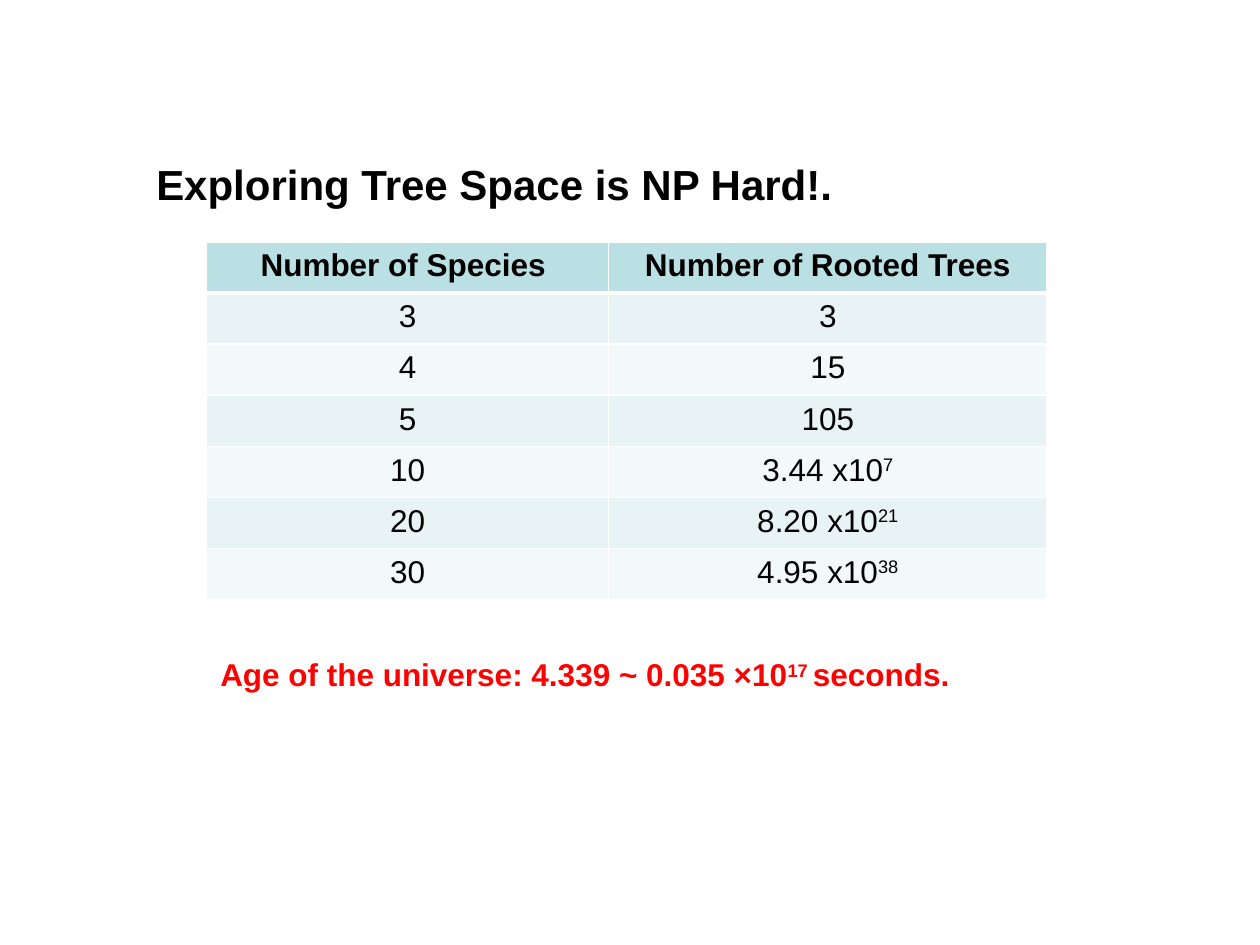
from dataclasses import dataclass

from lxml.etree import SubElement
from pptx import Presentation
from pptx.dml.color import RGBColor
from pptx.enum.text import MSO_ANCHOR, MSO_AUTO_SIZE, PP_ALIGN
from pptx.oxml.ns import qn
from pptx.util import Inches, Pt


@dataclass(frozen=True)
class Theme:
    font: str = "Arial"
    title_size: int = 24
    text_size: int = 18
    ink: str = "000000"
    accent: str = "FF0000"
    rule: str = "FFFFFF"
    header_fill: str = "BBE0E3"
    band_fills: tuple = ("E7F3F4", "F3F9FA")
    rule_width: int = 1
    header_rule_width: int = 3


THEME = Theme()
SUPERSCRIPT = "30000"

# Each text is a list of (words, is superscript) runs.
TITLE = [("Exploring Tree Space is NP Hard!.", False)]
HEADERS = ["Number of Species ", "Number of Rooted Trees"]
TREE_COUNTS = [  # species, rooted trees, power of ten
    ("3", "3", ""),
    ("4", "15", ""),
    ("5", "105", ""),
    ("10", "3.44 x10", "7"),
    ("20", "8.20 x10", "21"),
    ("30", "4.95 x10", "38"),
]
UNIVERSE_AGE = [
    ("Age of the universe: 4.339 ~ 0.035 ×10", False),
    ("17 ", True),
    ("seconds.", False),
]

TITLE_BOX = (1.14, 1.21, 7.97, 0.5)
TABLE_BOX = (1.64, 1.92, 6.67, 2.84)
AGE_BOX = (1.65, 5.15, 6.06, 0.4)
COLUMN_WIDTHS = (3.19, 3.48)


def write_runs(paragraph, runs, size, color, bold):
    for words, raised in runs:
        run = paragraph.add_run()
        run.text = words
        run.font.name = THEME.font
        run.font.size = Pt(size)
        run.font.bold = bold
        run.font.color.rgb = RGBColor.from_string(color)
        if raised:
            run.font._element.set("baseline", SUPERSCRIPT)


def set_borders(cell, top, bottom):
    """Rule all four sides; call before the fill, which must follow in the XML."""
    properties = cell._tc.get_or_add_tcPr()
    sides = {"L": THEME.rule_width, "R": THEME.rule_width, "T": top, "B": bottom}
    for side, width in sides.items():
        line = SubElement(properties, qn(f"a:ln{side}"), w=str(Pt(width)))
        solid = SubElement(line, qn("a:solidFill"))
        SubElement(solid, qn("a:srgbClr"), val=THEME.rule)


def add_title(slide):
    title = slide.shapes.title
    title.left, title.top, title.width, title.height = map(Inches, TITLE_BOX)
    frame = title.text_frame
    frame.word_wrap = True
    frame.auto_size = MSO_AUTO_SIZE.SHAPE_TO_FIT_TEXT
    frame.vertical_anchor = MSO_ANCHOR.TOP
    paragraph = frame.paragraphs[0]
    paragraph.alignment = PP_ALIGN.LEFT
    write_runs(paragraph, TITLE, THEME.title_size, THEME.ink, True)


def add_tree_table(slide):
    rows = [[[(header, False)] for header in HEADERS]]
    for species, trees, power in TREE_COUNTS:
        tree_runs = [(trees, False)] + ([(power, True)] if power else [])
        rows.append([[(species, False)], tree_runs])

    table = slide.shapes.add_table(
        len(rows), len(HEADERS), *map(Inches, TABLE_BOX)
    ).table
    for column, width in zip(table.columns, COLUMN_WIDTHS):
        column.width = Inches(width)

    for row_index, row in enumerate(rows):
        is_header = row_index == 0
        table.rows[row_index].height = Inches(TABLE_BOX[3] / len(rows))
        fill = THEME.header_fill if is_header else THEME.band_fills[(row_index - 1) % 2]
        top = THEME.header_rule_width if row_index == 1 else THEME.rule_width
        bottom = THEME.header_rule_width if is_header else THEME.rule_width
        for column_index, runs in enumerate(row):
            cell = table.cell(row_index, column_index)
            set_borders(cell, top, bottom)
            cell.fill.solid()
            cell.fill.fore_color.rgb = RGBColor.from_string(fill)
            paragraph = cell.text_frame.paragraphs[0]
            paragraph.alignment = PP_ALIGN.CENTER
            write_runs(paragraph, runs, THEME.text_size, THEME.ink, is_header)


def add_universe_age(slide):
    frame = slide.shapes.add_textbox(*map(Inches, AGE_BOX)).text_frame
    frame.word_wrap = False
    frame.auto_size = MSO_AUTO_SIZE.SHAPE_TO_FIT_TEXT
    write_runs(frame.paragraphs[0], UNIVERSE_AGE, THEME.text_size, THEME.accent, True)


def main():
    deck = Presentation()
    deck.slide_width, deck.slide_height = Inches(10), Inches(7.5)
    slide = deck.slides.add_slide(deck.slide_layouts.get_by_name("Title Only"))
    add_title(slide)
    add_tree_table(slide)
    add_universe_age(slide)
    deck.save("out.pptx")


if __name__ == "__main__":
    main()
